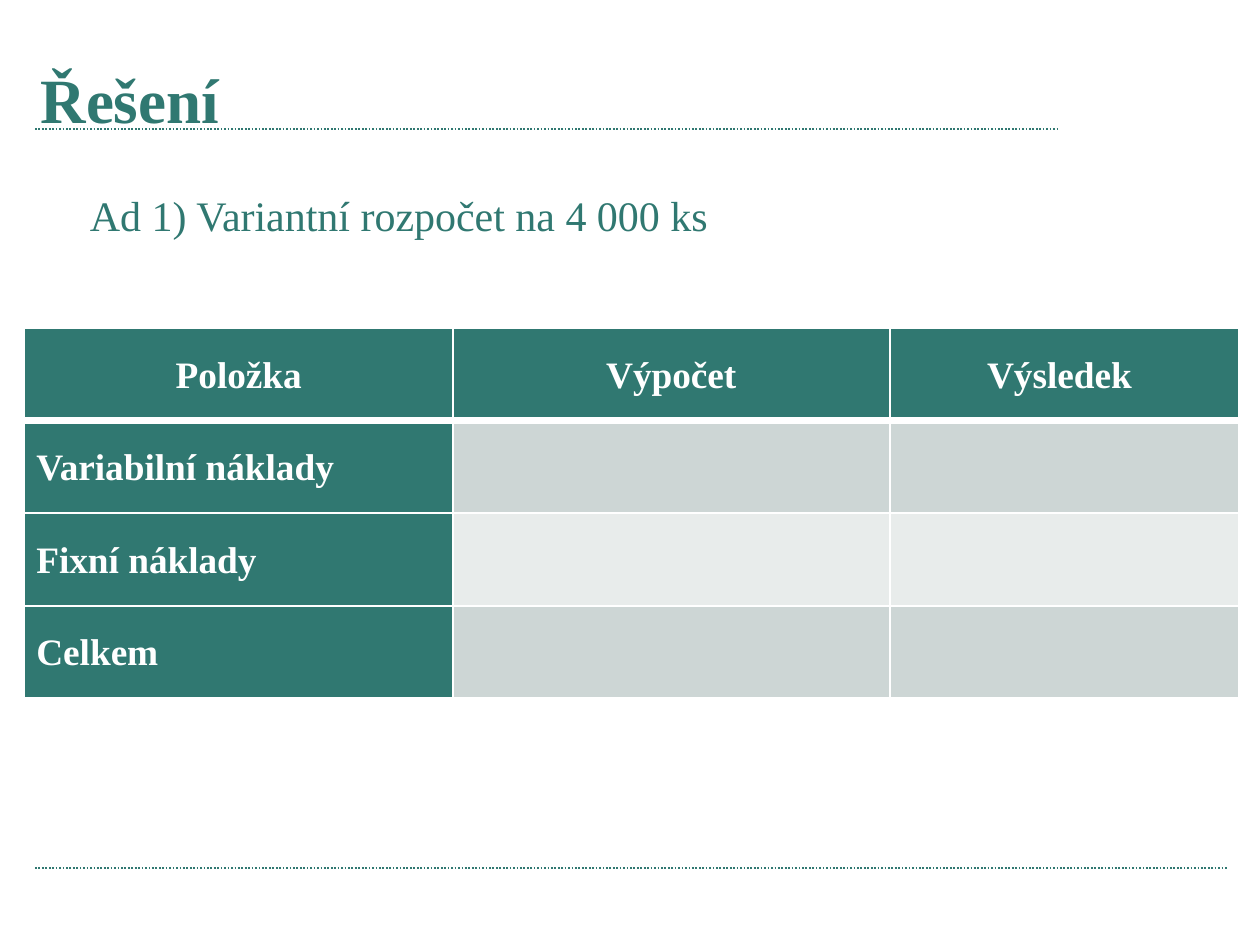
from lxml.etree import SubElement
from pptx import Presentation
from pptx.dml.color import RGBColor
from pptx.enum.dml import MSO_LINE_DASH_STYLE as Dash
from pptx.enum.shapes import MSO_CONNECTOR as Connector
from pptx.enum.text import MSO_ANCHOR as Anchor, MSO_AUTO_SIZE as AutoSize, PP_ALIGN as Align
from pptx.oxml.ns import qn
from pptx.util import Cm, Pt

COLORS = {
    "teal": "307871",
    "white": "FFFFFF",
    "band_dark": "CDD6D5",
    "band_light": "E8ECEB",
}
HEADERS = ["Položka", "Výpočet", "Výsledek "]
COSTS = ["Variabilní náklady", "Fixní náklady", "Celkem"]
COLUMN_WIDTHS = [6.48, 6.6, 5.28]
ROW_HEIGHT = 1.4


class SlideBuilder:
    font_name = "Times New Roman"

    def __init__(self, slide):
        self.slide = slide

    def add_run(self, paragraph, text, size, color, bold=False):
        run = paragraph.add_run()
        run.text = text
        run.font.name = self.font_name
        run.font.size = Pt(size)
        run.font.bold = bold
        run.font.color.rgb = RGBColor.from_string(COLORS[color])

    def add_title(self, text, left, top, width, height):
        title = self.slide.shapes.title
        title.left, title.top, title.width, title.height = map(Cm, (left, top, width, height))
        title.text_frame.vertical_anchor = Anchor.MIDDLE
        paragraph = title.text_frame.paragraphs[0]
        paragraph.alignment = Align.LEFT
        self.add_run(paragraph, text, 27, "teal", bold=True)

    def add_text(self, text, left, top, width, height):
        box = self.slide.shapes.add_textbox(*map(Cm, (left, top, width, height)))
        box.text_frame.word_wrap = True
        box.text_frame.auto_size = AutoSize.SHAPE_TO_FIT_TEXT
        self.add_run(box.text_frame.paragraphs[0], text, 18, "teal")

    def add_rule(self, left, right, top):
        rule = self.slide.shapes.add_connector(
            Connector.STRAIGHT, Cm(left), Cm(top), Cm(right), Cm(top))
        rule.line.color.rgb = RGBColor.from_string(COLORS["teal"])
        rule.line.width = Pt(0.75)
        rule.line.dash_style = Dash.ROUND_DOT
        SubElement(rule._element.spPr, qn("a:effectLst"))

    def add_borders(self, cell, top, bottom):
        properties = cell._tc.get_or_add_tcPr()
        for side, width in {"L": 1, "R": 1, "T": top, "B": bottom}.items():
            border = SubElement(properties, qn(f"a:ln{side}"), w=str(Pt(width)))
            fill = SubElement(border, qn("a:solidFill"))
            SubElement(fill, qn("a:srgbClr"), val=COLORS["white"])

    def format_cell(self, cell, text, row, column):
        self.add_borders(cell, top=3 if row == 1 else 1, bottom=3 if row == 0 else 1)
        if row == 0 or column == 0:
            color = "teal"
        else:
            color = "band_dark" if row % 2 else "band_light"
        cell.fill.solid()
        cell.fill.fore_color.rgb = RGBColor.from_string(COLORS[color])
        cell.vertical_anchor = Anchor.MIDDLE
        cell.margin_left = cell.margin_right = Cm(0.18)
        cell.margin_top = cell.margin_bottom = 0
        if text:
            paragraph = cell.text_frame.paragraphs[0]
            paragraph.alignment = Align.CENTER if row == 0 else Align.LEFT
            paragraph.line_spacing = 1.07
            self.add_run(paragraph, text, 16, "white", bold=True)

    def add_table(self, rows, left, top):
        table = self.slide.shapes.add_table(
            len(rows), len(COLUMN_WIDTHS), Cm(left), Cm(top),
            Cm(sum(COLUMN_WIDTHS)), Cm(ROW_HEIGHT * len(rows))).table
        table.first_col = True
        for column, width in zip(table.columns, COLUMN_WIDTHS):
            column.width = Cm(width)
        for row, texts in enumerate(rows):
            table.rows[row].height = Cm(ROW_HEIGHT)
            for column, text in enumerate(texts):
                self.format_cell(table.cell(row, column), text, row, column)


def main():
    presentation = Presentation()
    presentation.slide_width = Cm(19.05)
    presentation.slide_height = Cm(14.29)
    builder = SlideBuilder(presentation.slides.add_slide(presentation.slide_layouts[5]))
    builder.add_rule(0.53, 15.98, 1.95)
    builder.add_rule(0.53, 18.56, 13.13)
    builder.add_title("Řešení", 0.36, 0.74, 16.8, 1.5)
    builder.add_table([HEADERS] + [[cost, "", ""] for cost in COSTS], 0.37, 4.96)
    builder.add_text("Ad 1) Variantní rozpočet na 4 000 ks", 1.11, 2.74, 10.01, 1.02)
    presentation.save("out.pptx")


if __name__ == "__main__":
    main()
